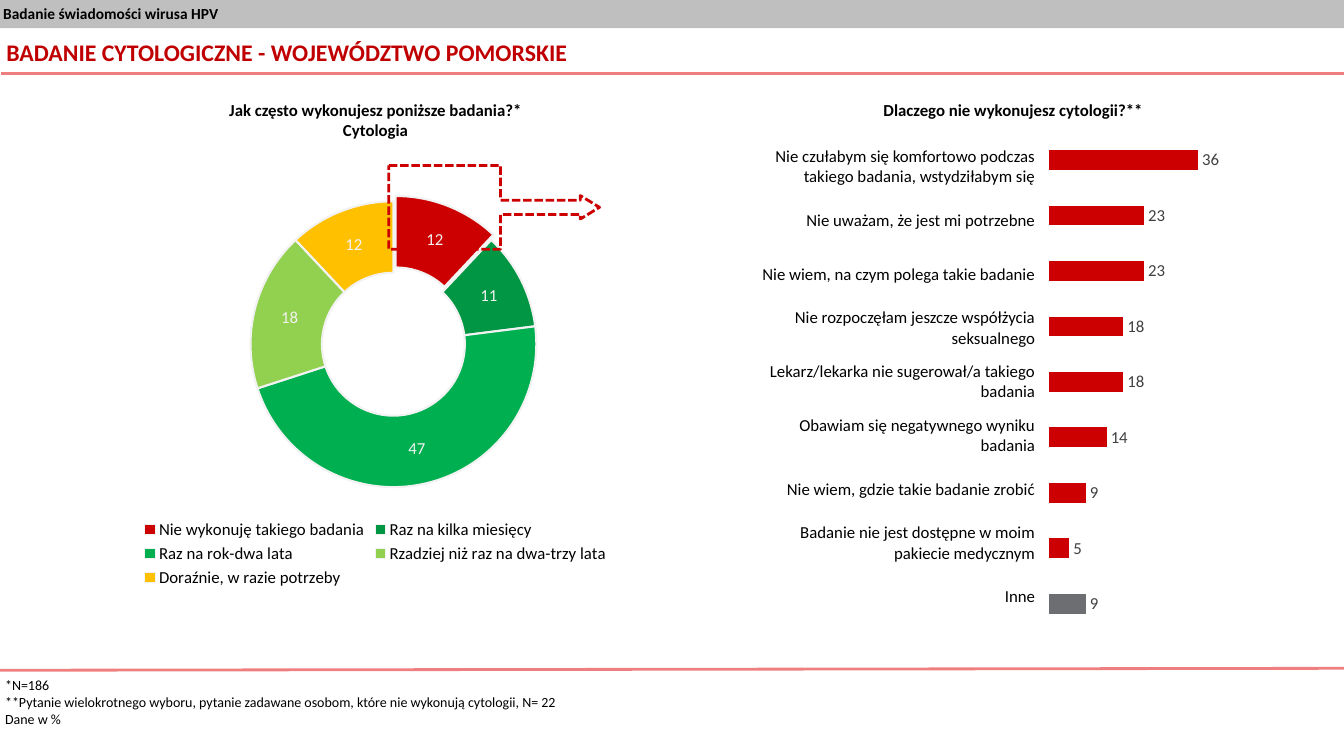
from lxml.etree import SubElement
from pptx import Presentation
from pptx.chart.data import CategoryChartData
from pptx.dml.color import RGBColor
from pptx.enum.chart import XL_CHART_TYPE, XL_LABEL_POSITION, XL_LEGEND_POSITION
from pptx.enum.dml import MSO_LINE
from pptx.enum.shapes import MSO_CONNECTOR, MSO_SHAPE
from pptx.enum.text import MSO_ANCHOR, MSO_AUTO_SIZE, PP_ALIGN
from pptx.oxml import parse_xml
from pptx.oxml.ns import nsdecls, qn
from pptx.util import Cm, Pt

FONT = "Calibri"
BLACK = RGBColor(0x00, 0x00, 0x00)
BAND_GREY = RGBColor(0x80, 0x80, 0x80)
RULE_RED = RGBColor(0xE0, 0x00, 0x00)
TITLE_RED = RGBColor(0xC0, 0x00, 0x00)
RED = RGBColor(0xCC, 0x00, 0x01)
DARK_GREEN = RGBColor(0x00, 0x96, 0x44)
GREEN = RGBColor(0x00, 0xB0, 0x50)
LIGHT_GREEN = RGBColor(0x92, 0xD0, 0x50)
AMBER = RGBColor(0xFF, 0xC0, 0x00)
OTHER_GREY = RGBColor(0x6D, 0x6E, 0x71)
PALE = RGBColor(0xF2, 0xF2, 0xF2)
LABEL_GREY = RGBColor(0x40, 0x40, 0x40)

STUDY = "Badanie świadomości wirusa HPV"
TITLE = "BADANIE CYTOLOGICZNE - WOJEWÓDZTWO POMORSKIE"
FREQUENCY = [
    ("Nie wykonuję takiego badania", 12, RED),
    ("Raz na kilka miesięcy", 11, DARK_GREEN),
    ("Raz na rok-dwa lata", 47, GREEN),
    ("Rzadziej niż raz na dwa-trzy lata", 18, LIGHT_GREEN),
    ("Doraźnie, w razie potrzeby", 12, AMBER),
]
REASONS = [
    ("Nie czułabym się komfortowo podczas takiego badania, wstydziłabym się", 36),
    ("Nie uważam, że jest mi potrzebne", 23),
    ("Nie wiem, na czym polega takie badanie", 23),
    ("Nie rozpoczęłam jeszcze współżycia seksualnego", 18),
    ("Lekarz/lekarka nie sugerował/a takiego badania", 18),
    ("Obawiam się negatywnego wyniku badania", 14),
    ("Nie wiem, gdzie takie badanie zrobić", 9),
    ("Badanie nie jest dostępne w moim pakiecie medycznym", 5),
    ("Inne", 9),
]
TEXTS = [
    (["Jak często wykonujesz poniższe badania?*", "Cytologia"],
     (3.51, 2.39, 11.91, 1.27), 12, True, PP_ALIGN.CENTER),
    (["Dlaczego nie wykonujesz cytologii?**"],
     (19.58, 2.39, 11.91, 0.76), 12, True, PP_ALIGN.CENTER),
    (["*N=186",
      "**Pytanie wielokrotnego wyboru, pytanie zadawane osobom, które nie wykonują cytologii, N= 22",
      "Dane w %"],
     (0, 16.92, 20.29, 1.55), 10, False, PP_ALIGN.LEFT),
]
RULES = [(34.04, 1.85, 0.03, 1.85), (34.01, 16.84, -0.33, 16.89)]


def box(*lengths):
    return [Cm(v) for v in lengths]


def style(font, size, color, bold=False):
    font.name, font.size, font.bold = FONT, Pt(size), bold
    font.color.rgb = color


def write(tf, lines, size, color=BLACK, bold=False, align=PP_ALIGN.LEFT):
    tf.word_wrap = True
    tf.auto_size = MSO_AUTO_SIZE.NONE
    tf.margin_left = tf.margin_right = tf.margin_top = tf.margin_bottom = Cm(0.13)
    for i, line in enumerate(lines):
        p = tf.paragraphs[0] if i == 0 else tf.add_paragraph()
        p.text, p.alignment = line, align
        style(p.font, size, color, bold)


def make_half_transparent(fill_parent):
    color = fill_parent.find(qn("a:solidFill"))[0]
    SubElement(color, qn("a:alpha")).set("val", "50000")


def add_chart(slide, kind, names, values, area, plot, label_color):
    data = CategoryChartData(number_format="###0")
    data.categories = names
    data.add_series("Series 1", values)
    chart = slide.shapes.add_chart(kind, *box(*area), data).chart
    chart.has_title = chart.has_legend = False
    style(chart.font, 12, BLACK)
    plot_area = chart.element.xpath(".//c:plotArea")[0]
    for old in plot_area.findall(qn("c:layout")):
        plot_area.remove(old)
    sizes = "".join(f'<c:{k} val="{v}"/>' for k, v in zip("xywh", plot))
    plot_area.insert(0, parse_xml(
        f'<c:layout {nsdecls("c")}><c:manualLayout><c:layoutTarget val="inner"/>'
        f'<c:xMode val="edge"/><c:yMode val="edge"/>{sizes}</c:manualLayout></c:layout>'))
    series = chart.plots[0].series[0]
    labels = series.data_labels
    labels.show_value = True
    labels.number_format, labels.number_format_is_linked = "###0", False
    style(labels.font, 12, label_color)
    return chart, series


def add_frequency_chart(slide):
    names, values, colors = zip(*FREQUENCY)
    chart, series = add_chart(slide, XL_CHART_TYPE.DOUGHNUT, names, values,
                              (1.96, 4.52, 15.01, 10.39), (0.29, 0.05, 0.48, 0.7), PALE)
    chart.plots[0].vary_by_categories = True
    chart.has_legend = True
    chart.legend.position = XL_LEGEND_POSITION.BOTTOM
    chart.legend.include_in_layout = False
    style(chart.legend.font, 12, BLACK)
    for i, color in enumerate(colors):
        fmt = series.points[i].format
        fmt.fill.solid()
        fmt.fill.fore_color.rgb = color
        fmt.line.color.rgb = PALE
        fmt.line.width = Pt(1.5)
    chart.element.xpath(".//c:holeSize")[0].set("val", "75")
    first = chart.element.xpath(".//c:dPt")[0]
    first.insert(1, parse_xml(f'<c:explosion {nsdecls("c")} val="8"/>'))


def add_reason_chart(slide):
    numbers = [str(i + 1) for i in range(len(REASONS))]
    chart, series = add_chart(slide, XL_CHART_TYPE.BAR_CLUSTERED, numbers,
                              [value for _, value in REASONS],
                              (26.21, 3.07, 10.8, 13.11), (0.02, 0.02, 0.97, 0.96), LABEL_GREY)
    plot = chart.plots[0]
    plot.vary_by_categories, plot.gap_width = False, 182
    series.data_labels.position = XL_LABEL_POSITION.OUTSIDE_END
    for fmt, color in ((series.format, RED), (series.points[len(REASONS) - 1].format, OTHER_GREY)):
        fmt.fill.solid()
        fmt.fill.fore_color.rgb = color
    chart.category_axis.reverse_order = True
    chart.value_axis.minimum_scale, chart.value_axis.maximum_scale = 0, 100
    chart.value_axis.has_major_gridlines = False
    chart.category_axis.visible = chart.value_axis.visible = False


def add_reason_table(slide):
    table = slide.shapes.add_table(len(REASONS), 1, *box(18.62, 3.53, 7.72, 12.19)).table
    table.first_row = table.horz_banding = False
    for row, (reason, _) in zip(table.rows, REASONS):
        cell = row.cells[0]
        cell.fill.background()
        cell.vertical_anchor = MSO_ANCHOR.MIDDLE
        p = cell.text_frame.paragraphs[0]
        p.text, p.alignment = reason, PP_ALIGN.RIGHT
        style(p.font, 12, BLACK)


def main():
    """Build the cytology survey slide."""
    prs = Presentation()
    prs.slide_width, prs.slide_height = box(33.87, 19.05)
    slide = prs.slides.add_slide(prs.slide_layouts[5])

    band = slide.shapes.add_shape(MSO_SHAPE.RECTANGLE, *box(-0.05, -0.03, 33.93, 0.74))
    band.shadow.inherit = False
    band.fill.solid()
    band.fill.fore_color.rgb = BAND_GREY
    make_half_transparent(band.element.spPr)
    band.line.fill.background()
    write(band.text_frame, [STUDY], 11, bold=True)

    for ends in RULES:
        rule = slide.shapes.add_connector(MSO_CONNECTOR.STRAIGHT, *box(*ends))
        rule.line.color.rgb = RULE_RED
        rule.line.width = Pt(2)
        make_half_transparent(rule.element.spPr.find(qn("a:ln")))
        SubElement(rule.element.spPr, qn("a:effectLst"))

    title = slide.shapes.title
    title.left, title.top, title.width, title.height = box(0.03, 0.74, 33.86, 1.12)
    write(title.text_frame, [TITLE], 17, TITLE_RED, True)
    title.text_frame.vertical_anchor = MSO_ANCHOR.MIDDLE

    add_frequency_chart(slide)
    for lines, area, size, bold, align in TEXTS:
        tb = slide.shapes.add_textbox(*box(*area))
        write(tb.text_frame, lines, size, bold=bold, align=align)

    callout = slide.shapes.add_shape(MSO_SHAPE.RIGHT_ARROW_CALLOUT, *box(9.8, 4.17, 5.31, 2.11))
    for i, value in enumerate((0.17, 0.14, 0.23, 0.53)):
        callout.adjustments[i] = value
    callout.shadow.inherit = False
    callout.fill.background()
    callout.line.color.rgb = RED
    callout.line.width = Pt(2)
    callout.line.dash_style = MSO_LINE.SQUARE_DOT

    add_reason_chart(slide)
    add_reason_table(slide)
    prs.save("out.pptx")


if __name__ == "__main__":
    main()
